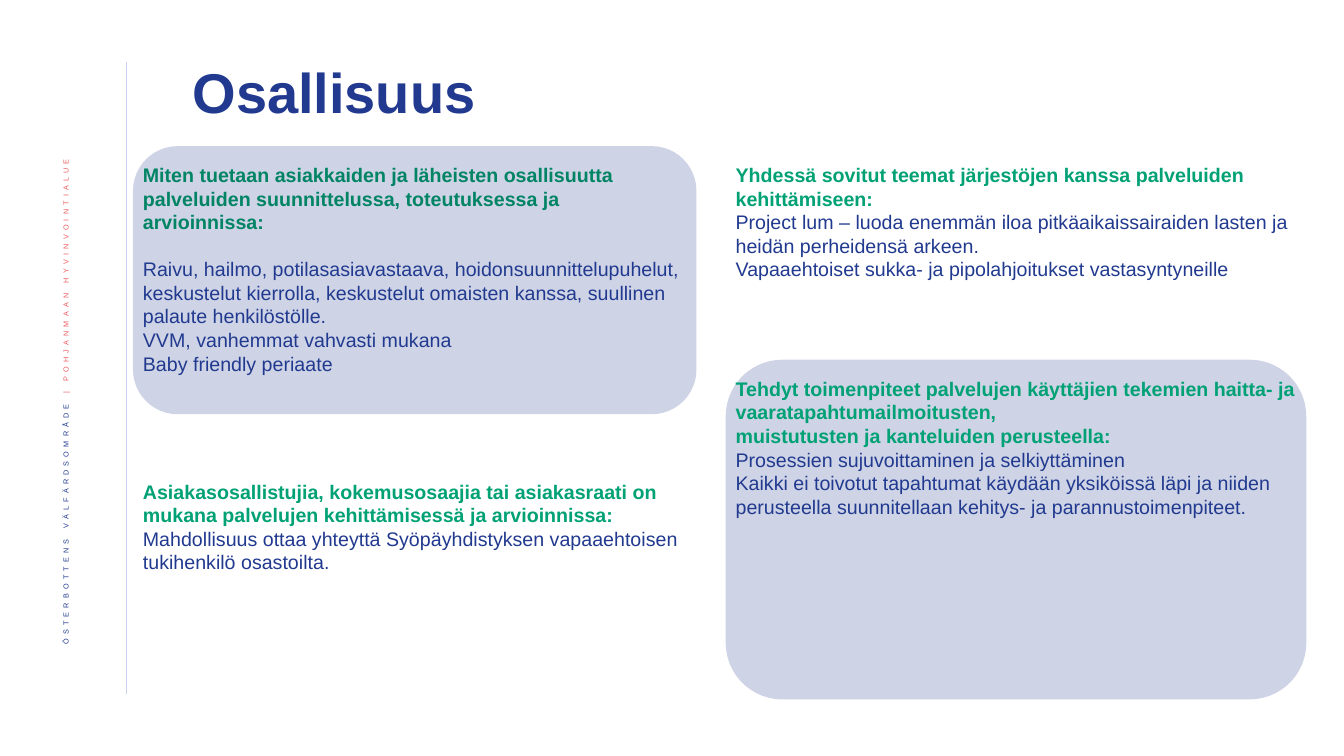
from lxml.etree import SubElement
from pptx import Presentation
from pptx.dml.color import RGBColor
from pptx.enum.shapes import MSO_CONNECTOR, MSO_SHAPE
from pptx.enum.text import MSO_ANCHOR, MSO_AUTO_SIZE, PP_ALIGN
from pptx.oxml.ns import qn
from pptx.util import Pt

NAVY, GREEN, DARK_GREEN = "213A8F", "00A174", "008464"
CORAL, PALE_BLUE = "EB5C5F", "C9D2F2"
LEFT, LEFT_WIDTH = 95, 402.5
RIGHT, RIGHT_WIDTH = 518.4, 414.7
TEXT_INSET = 8.6


def rgb(color):
    return RGBColor.from_string(color)


def add_run(p, text, color, **formats):
    r = p.add_run()
    r.text = text
    r.font.color.rgb = rgb(color)
    for name, value in {"name": "Arial", **formats}.items():
        setattr(r.font, name, value)
    return r


def add_title(slide, text):
    sp = slide.shapes.title
    box = {"left": 130.3, "top": 32.4, "width": 718.6, "height": 71.3}
    for name, value in box.items():
        setattr(sp, name, Pt(value))
    tf = sp.text_frame
    tf.vertical_anchor = MSO_ANCHOR.MIDDLE
    p = tf.paragraphs[0]
    p.alignment, p.line_spacing = PP_ALIGN.LEFT, 0.9
    add_run(p, text, NAVY, size=Pt(40), bold=True)


def add_rule(slide, x, top, bottom):
    line = slide.shapes.add_connector(
        MSO_CONNECTOR.STRAIGHT, Pt(x), Pt(top), Pt(x), Pt(bottom))
    line.line.color.rgb = rgb(PALE_BLUE)
    line.line.width = Pt(0.5)
    SubElement(line._element.spPr, qn("a:effectLst"))


def add_side_label(slide, parts):
    sp = slide.shapes.add_textbox(Pt(30.2), Pt(102.2), Pt(37.4), Pt(412.6))
    tf = sp.text_frame
    tf.word_wrap = True
    tf.vertical_anchor = MSO_ANCHOR.MIDDLE
    tf._txBody.bodyPr.set("vert", "vert270")
    p = tf.paragraphs[0]
    p.alignment, p.line_spacing = PP_ALIGN.RIGHT, 0.9
    for text, color in parts:
        rPr = add_run(p, text, color, size=Pt(9))._r.get_or_add_rPr()
        rPr.set("baseline", "30000")
        rPr.set("spc", "300")


def add_card(slide, left, top, width, height):
    sp = slide.shapes.add_shape(
        MSO_SHAPE.ROUNDED_RECTANGLE, Pt(left), Pt(top), Pt(width), Pt(height))
    sp.shadow.inherit = False
    sp.fill.solid()
    sp.fill.fore_color.rgb = rgb(NAVY)
    color = sp._element.spPr.find(qn("a:solidFill"))[0]
    SubElement(color, qn("a:alpha"), val="22000")
    sp.line.fill.background()


def add_section(slide, left, top, width, height, headings, lines,
                color=GREEN, gap=0):
    sp = slide.shapes.add_textbox(Pt(left), Pt(top), Pt(width), Pt(height))
    tf = sp.text_frame
    tf.word_wrap = True
    tf.auto_size = MSO_AUTO_SIZE.SHAPE_TO_FIT_TEXT
    for i, text in enumerate(headings + lines):
        p = tf.paragraphs[0] if i == 0 else tf.add_paragraph()
        heading = i < len(headings)
        if gap and i == len(headings):
            p.space_before = Pt(gap)
        add_run(p, text, color if heading else NAVY, size=Pt(14), bold=heading)


def main():
    """Build the participation slide and save it."""
    prs = Presentation()
    prs.slide_width, prs.slide_height = Pt(960), Pt(540)
    slide = prs.slides.add_slide(prs.slide_layouts[5])

    add_rule(slide, 90, 44, 495.4)
    add_side_label(slide, [("ÖSTERBOTTENS VÄLFÄRDSOMRÅDE ", NAVY),
                           ("| POHJANMAAN HYVINVOINTIALUE ", CORAL)])
    add_title(slide, "Osallisuus")

    left_top, right_top = 104.4, 257
    add_card(slide, LEFT, left_top, LEFT_WIDTH, 191.5)
    add_section(
        slide, LEFT, left_top + TEXT_INSET, LEFT_WIDTH, 143.3,
        ["Miten tuetaan asiakkaiden ja läheisten osallisuutta palveluiden "
         "suunnittelussa, toteutuksessa ja arvioinnissa:"],
        ["Raivu, hailmo, potilasasiavastaava, hoidonsuunnittelupuhelut, "
         "keskustelut kierrolla, keskustelut omaisten kanssa, suullinen "
         "palaute henkilöstölle.",
         "VVM, vanhemmat vahvasti mukana",
         "Baby friendly periaate"],
        color=DARK_GREEN, gap=16.8)
    add_section(
        slide, RIGHT, left_top + TEXT_INSET, RIGHT_WIDTH, 92.2,
        ["Yhdessä sovitut teemat järjestöjen kanssa palveluiden "
         "kehittämiseen:"],
        ["Project lum – luoda enemmän iloa pitkäaikaissairaiden lasten ja "
         "heidän perheidensä arkeen.",
         "Vapaaehtoiset sukka- ja pipolahjoitukset vastasyntyneille"])
    add_section(
        slide, LEFT, 339.1, LEFT_WIDTH, 92.2,
        ["Asiakasosallistujia, kokemusosaajia tai asiakasraati on mukana "
         "palvelujen kehittämisessä ja arvioinnissa:"],
        ["Mahdollisuus ottaa yhteyttä Syöpäyhdistyksen vapaaehtoisen "
         "tukihenkilö osastoilta."])
    add_card(slide, RIGHT, right_top, RIGHT_WIDTH, 242.6)
    add_section(
        slide, RIGHT, right_top + TEXT_INSET, RIGHT_WIDTH, 126,
        ["Tehdyt toimenpiteet palvelujen käyttäjien tekemien haitta- ja "
         "vaaratapahtumailmoitusten,",
         "muistutusten ja kanteluiden perusteella:"],
        ["Prosessien sujuvoittaminen ja selkiyttäminen",
         "Kaikki ei toivotut tapahtumat käydään yksiköissä läpi ja niiden "
         "perusteella suunnitellaan kehitys- ja parannustoimenpiteet."])

    prs.save("out.pptx")


if __name__ == "__main__":
    main()
